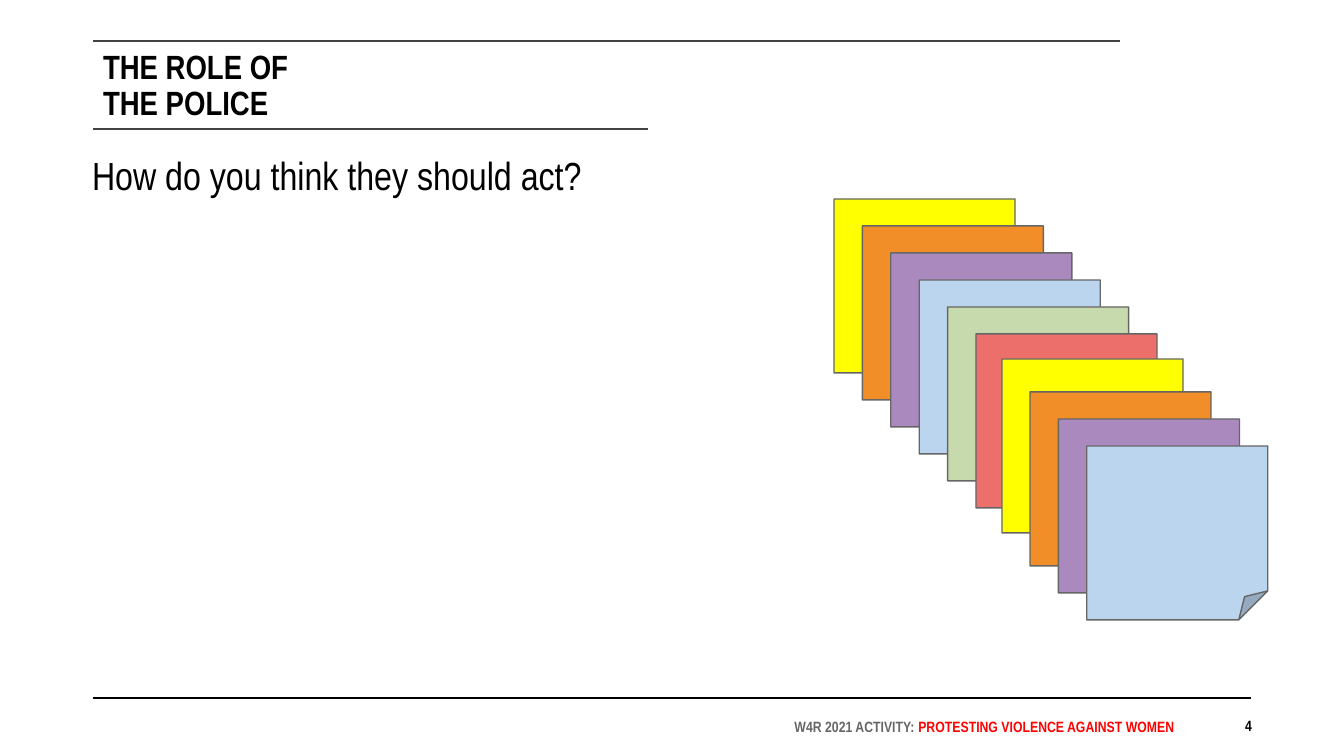
import pptx
import pptx.dml.color
import pptx.enum.shapes
import pptx.enum.text
import pptx.oxml.ns
import pptx.util
from lxml import etree

PX = 914400 / 134.4
SLIDE_SIZE = (1344, 756)
FONT = "Arial Narrow"
BLACK, GREY, DARK, RED = "000000", "666666", "424242", "FF0000"
ALIGN = pptx.enum.text.PP_ALIGN
ANCHOR = pptx.enum.text.MSO_ANCHOR

# left, right, y, colour, width in points
RULES = [
    (93, 1251, 698, BLACK, 1.5),
    (93, 1120, 41, DARK, 1),
    (93, 648, 129, DARK, 1),
]
TITLE = [[("THE ROLE OF", BLACK)], [("THE POLICE", BLACK)]]
QUESTION = [[("How do you think they should act?", BLACK)]]
FOOTER = [[("W4R 2021 ACTIVITY: ", GREY), ("PROTESTING VIOLENCE AGAINST WOMEN", RED)]]
PAGE_NUMBER = [[("4", BLACK)]]

YELLOW, ORANGE, PURPLE, BLUE, GREEN, CORAL = (
    "FFFF00", "F18E28", "AA89BE", "BBD5EE", "C7DAAD", "EC6F6B")
NOTE_SIZE = (181, 174)
NOTE_STEP = (28.4, 27)
# start of each evenly stepped stack, and its colours from back to front
NOTE_STACKS = [
    ((834, 199), [YELLOW, ORANGE, PURPLE, BLUE, GREEN, CORAL]),
    ((1002, 359), [YELLOW]),
    ((1030, 392), [ORANGE, PURPLE, BLUE]),
]


def px(value):
    return pptx.util.Emu(round(value * PX))


def color(value):
    return pptx.dml.color.RGBColor.from_string(value)


def place(shape, left, top, width, height):
    shape.left, shape.top = px(left), px(top)
    shape.width, shape.height = px(width), px(height)


def write(shape, paragraphs, size, bold=True, align=ALIGN.LEFT, anchor=ANCHOR.TOP,
          spacing=1.0, insets=(0, 0)):
    """Fill a shape with paragraphs of (text, colour) runs; insets are x and y."""
    frame = shape.text_frame
    frame.word_wrap = True
    frame.auto_size = pptx.enum.text.MSO_AUTO_SIZE.NONE
    frame.vertical_anchor = anchor
    frame.margin_left = frame.margin_right = px(insets[0])
    frame.margin_top = frame.margin_bottom = px(insets[1])
    for index, runs in enumerate(paragraphs):
        paragraph = frame.add_paragraph() if index else frame.paragraphs[0]
        paragraph.alignment = align
        paragraph.line_spacing = spacing
        for text, run_color in runs:
            run = paragraph.add_run()
            run.text = text
            run.font.name = FONT
            run.font.size = pptx.util.Pt(size)
            run.font.bold = bold
            run.font.color.rgb = color(run_color)


def add_text(slide, box, paragraphs, **text_format):
    shape = slide.shapes.add_textbox(*map(px, box))
    write(shape, paragraphs, **text_format)
    return shape


def add_rule(slide, left, right, y, line_color, width):
    rule = slide.shapes.add_connector(
        pptx.enum.shapes.MSO_CONNECTOR.STRAIGHT, px(left), px(y), px(right), px(y))
    rule.line.color.rgb = color(line_color)
    rule.line.width = pptx.util.Pt(width)
    etree.SubElement(rule._element.spPr, pptx.oxml.ns.qn("a:effectLst"))


def add_note(slide, left, top, fill):
    note = slide.shapes.add_shape(
        pptx.enum.shapes.MSO_SHAPE.FOLDED_CORNER, px(left), px(top), *map(px, NOTE_SIZE))
    note.shadow.inherit = False
    note.fill.solid()
    note.fill.fore_color.rgb = color(fill)
    note.line.color.rgb = color(GREY)
    note.line.width = pptx.util.Pt(0.75)


def main():
    presentation = pptx.Presentation()
    presentation.slide_width, presentation.slide_height = map(px, SLIDE_SIZE)
    slide = presentation.slides.add_slide(presentation.slide_layouts[5])

    for rule in RULES:
        add_rule(slide, *rule)

    title = slide.shapes.title
    place(title, 93, 50, 456, 70)
    write(title, TITLE, size=18, spacing=0.9, insets=(10, 0))

    add_text(slide, (1185, 720, 67, 15), PAGE_NUMBER, size=8,
             align=ALIGN.RIGHT, anchor=ANCHOR.BOTTOM)
    question = add_text(slide, (79, 131, 575, 75), QUESTION, size=21, bold=False,
                        spacing=1.15, insets=(13, 13))
    question.text_frame.auto_size = pptx.enum.text.MSO_AUTO_SIZE.SHAPE_TO_FIT_TEXT

    for (left, top), fills in NOTE_STACKS:
        for index, fill in enumerate(fills):
            add_note(slide, left + index * NOTE_STEP[0], top + index * NOTE_STEP[1], fill)

    add_text(slide, (768, 712, 407, 23), FOOTER, size=8,
             align=ALIGN.RIGHT, anchor=ANCHOR.BOTTOM)
    presentation.save("out.pptx")


if __name__ == "__main__":
    main()
